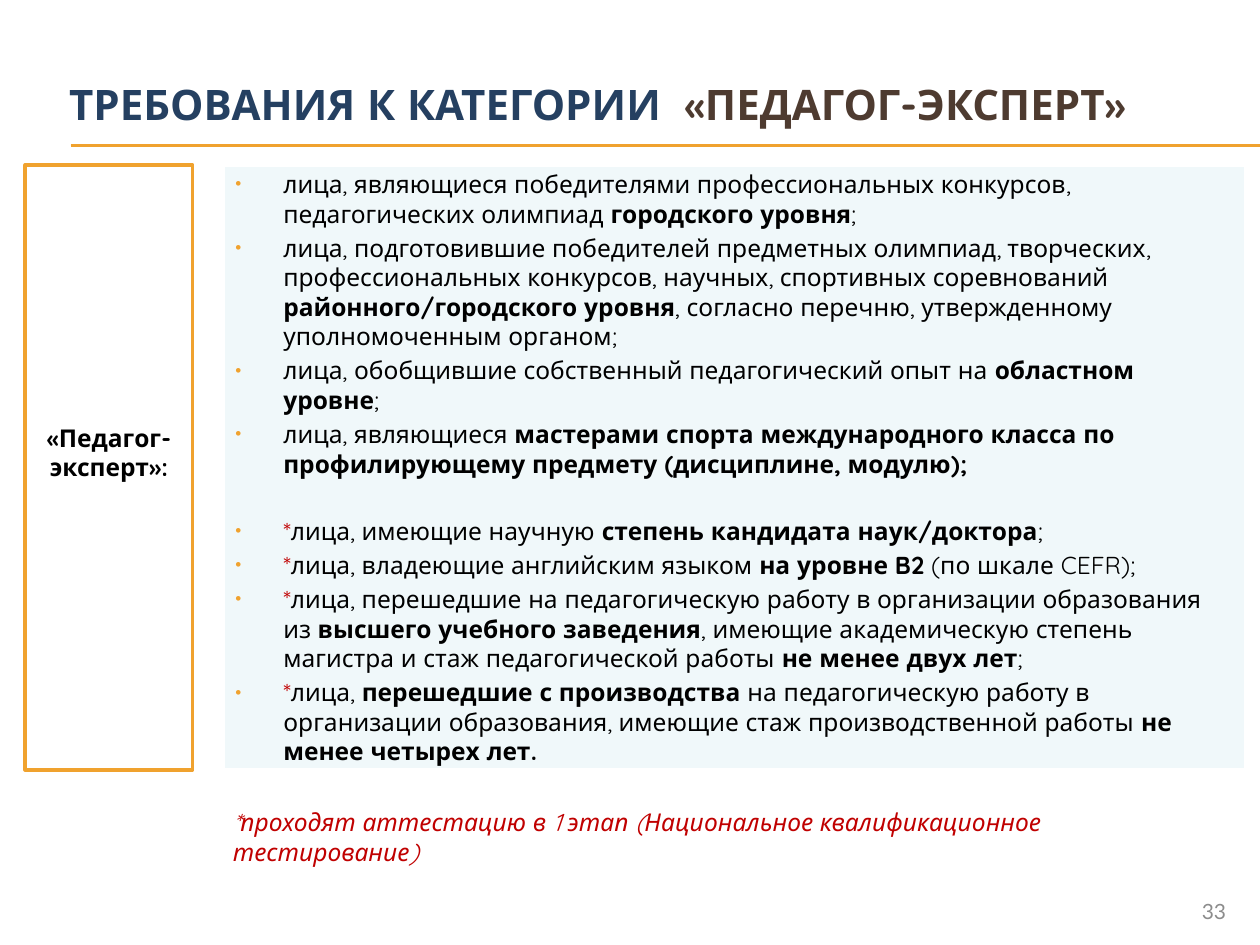
from lxml.etree import SubElement
from pptx import Presentation
from pptx.dml.color import RGBColor
from pptx.enum.shapes import MSO_CONNECTOR, MSO_SHAPE
from pptx.enum.text import MSO_ANCHOR, PP_ALIGN
from pptx.oxml.ns import qn
from pptx.util import Inches, Pt

COLORS = {
    "black": "000000", "white": "FFFFFF", "orange": "F0A22E", "pale": "F0F8FA",
    "red": "C00000", "navy": "254061", "brown": "4E3B30", "gray": "8C8C8C",
}

# Text between bars is bold; a leading asterisk is set in red.
REQUIREMENTS = [
    "лица, являющиеся победителями профессиональных конкурсов, педагогических "
    "олимпиад |городского уровня|;",
    "лица, подготовившие победителей предметных олимпиад, творческих, "
    "профессиональных конкурсов, научных, спортивных соревнований "
    "|районного/городского уровня|, согласно перечню, утвержденному "
    "уполномоченным органом;",
    "лица, обобщившие собственный педагогический опыт на |областном уровне|;",
    "лица, являющиеся |мастерами спорта международного класса по "
    "профилирующему предмету (дисциплине, модулю);|",
]
STARRED_REQUIREMENTS = [
    "*лица, имеющие научную |степень кандидата наук/доктора|;",
    "*лица, владеющие английским языком |на уровне B2| (по шкале CEFR);",
    "*лица, перешедшие на педагогическую работу в организации образования из "
    "|высшего учебного заведения|, имеющие академическую степень магистра и "
    "стаж педагогической работы |не менее двух лет|;",
    "*лица, |перешедшие с производства| на педагогическую работу в организации "
    "образования, имеющие стаж производственной работы |не менее четырех лет.|",
]


def rgb(name):
    return RGBColor.from_string(COLORS[name])


def add_run(p, text, size=14, color="black", font="Quicksand", bold=False, italic=False):
    r = p.add_run()
    r.text = text
    r.font.name, r.font.size = font, Pt(size)
    r.font.bold, r.font.italic = bold, italic
    r.font.color.rgb = rgb(color)


def add_text_box(s, box, anchor=MSO_ANCHOR.TOP):
    """Add a wrapping text box and return its first paragraph."""
    tf = s.shapes.add_textbox(*map(Inches, box)).text_frame
    tf.word_wrap = True
    tf.vertical_anchor = anchor
    return tf.paragraphs[0]


def add_panel(s, box, fill, line):
    """Add a rectangle and return its text frame."""
    sp = s.shapes.add_shape(MSO_SHAPE.RECTANGLE, *map(Inches, box))
    sp.shadow.inherit = False
    sp.fill.solid()
    sp.fill.fore_color.rgb = rgb(fill)
    sp.line.color.rgb = rgb(line)
    sp.line.width = Pt(2)
    tf = sp.text_frame
    tf.word_wrap = True
    tf.vertical_anchor = MSO_ANCHOR.MIDDLE
    return tf


def set_bullet(p, indent=0.38):
    pPr = p._p.get_or_add_pPr()
    pPr.set("marL", str(Inches(indent)))
    pPr.set("indent", str(-Inches(indent)))
    color = SubElement(pPr, qn("a:buClr"))
    SubElement(color, qn("a:srgbClr"), val=COLORS["orange"])
    SubElement(pPr, qn("a:buSzPct"), val="70000")
    SubElement(pPr, qn("a:buFont"), typeface="Arial")
    SubElement(pPr, qn("a:buChar"), char="•")


def add_header(s, left, top, width, height):
    p = add_text_box(s, (left, top, width, height), MSO_ANCHOR.MIDDLE)
    add_run(p, "ТРЕБОВАНИЯ К КАТЕГОРИИ  ", size=24, color="navy", bold=True)
    add_run(p, "«ПЕДАГОГ-ЭКСПЕРТ»", size=24, color="brown", bold=True)
    for y in (top + 0.52, top + 0.53):
        rule = s.shapes.add_connector(
            MSO_CONNECTOR.STRAIGHT, Inches(left + 0.11), Inches(y), Inches(10), Inches(y))
        rule.line.color.rgb = rgb("orange")
        rule.line.width = Pt(0.75)
        SubElement(rule._element.spPr, qn("a:effectLst"))


def add_category(s, *box):
    tf = add_panel(s, box, "white", "orange")
    tf.margin_bottom = Inches(0.29)
    p = tf.paragraphs[0]
    p.alignment = PP_ALIGN.CENTER
    add_run(p, "«Педагог-эксперт»:", bold=True)


def add_requirements(s, *box):
    tf = add_panel(s, box, "pale", "white")
    for i, item in enumerate(REQUIREMENTS + STARRED_REQUIREMENTS):
        p = tf.add_paragraph() if i else tf.paragraphs[0]
        p.alignment = PP_ALIGN.LEFT
        p.space_before = Pt(21.5 if i == len(REQUIREMENTS) else 2.8)
        set_bullet(p)
        if item.startswith("*"):
            add_run(p, "*", color="red")
        for j, part in enumerate(item.lstrip("*").split("|")):
            if part:
                add_run(p, part, bold=j % 2 == 1)


def add_footnote(s, *box):
    add_run(add_text_box(s, box),
            "*проходят аттестацию в 1 этап (Национальное квалификационное тестирование)",
            color="red", italic=True)


def add_page_number(s, *box):
    p = add_text_box(s, box)
    p.alignment = PP_ALIGN.RIGHT
    add_run(p, "33", size=12, color="gray", font="Lato")


def main():
    prs = Presentation()
    prs.slide_width, prs.slide_height = Inches(10), Inches(7.5)
    s = prs.slides.add_slide(prs.slide_layouts[6])
    add_header(s, 0.45, 0.63, 9, 0.39)
    add_requirements(s, 1.77, 1.31, 8.12, 4.8)
    add_category(s, 0.2, 1.31, 1.33, 4.8)
    add_footnote(s, 1.75, 6.36, 7.75, 0.57)
    add_page_number(s, 9, 7.08, 0.83, 0.27)
    prs.save("out.pptx")


if __name__ == "__main__":
    main()
